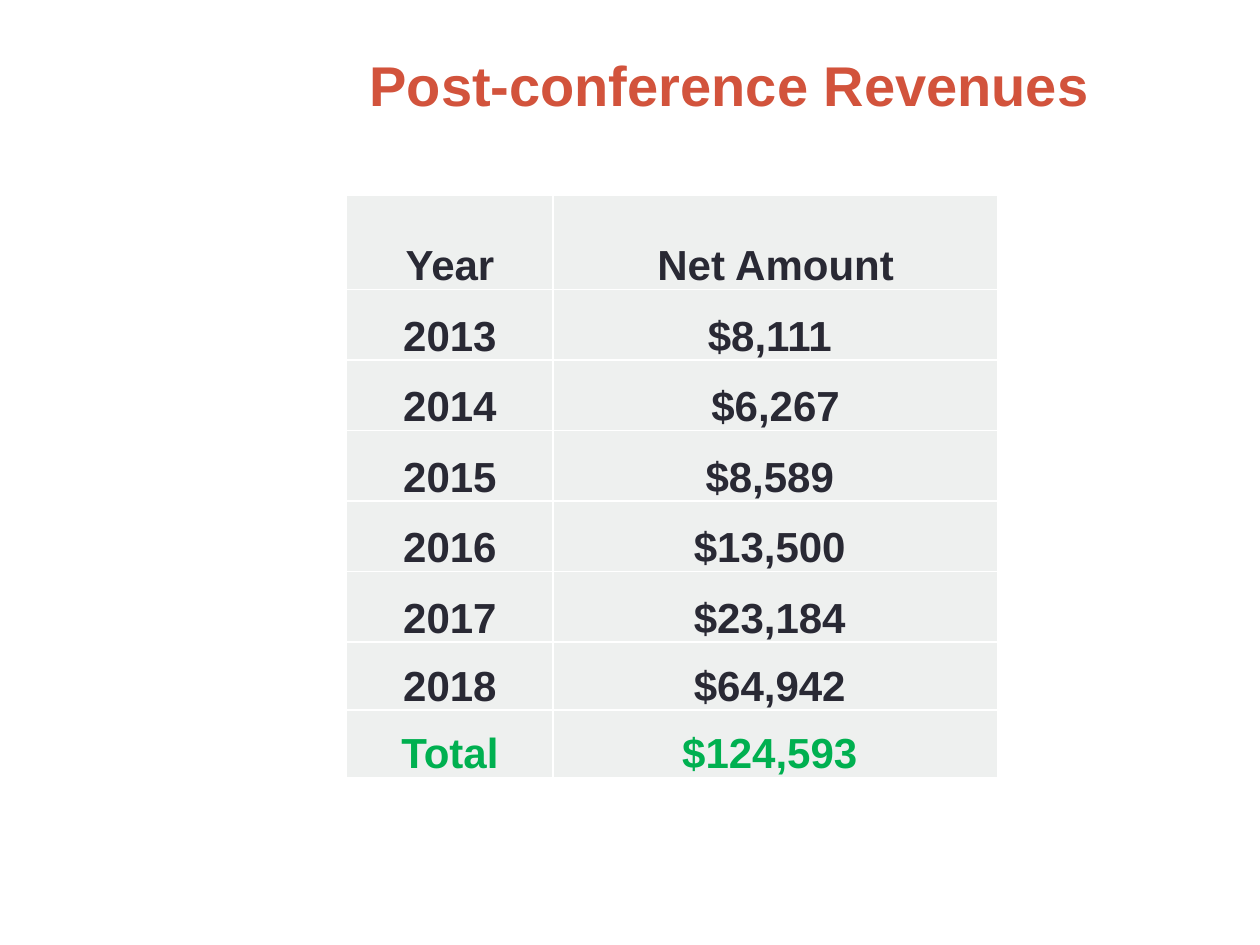
"""Build the post-conference revenues slide."""
from dataclasses import dataclass

from lxml.etree import SubElement
from pptx import Presentation
from pptx.dml.color import RGBColor as RGB
from pptx.enum.text import MSO_ANCHOR as ANCHOR, PP_ALIGN as ALIGN
from pptx.oxml.ns import qn
from pptx.util import Cm, Pt


@dataclass(frozen=True)
class Theme:
    font: str = "Arial"
    title: str = "D2533C"
    body: str = "292934"
    total: str = "00B050"
    cell: str = "EEF0EF"
    border: str = "FFFFFF"
    title_size: int = 32
    body_size: int = 24


THEME = Theme()
ROWS = [
    ("Year", "Net Amount"),
    ("2013", "$8,111 "),
    ("2014", "$6,267"),
    ("2015", "$8,589 "),
    ("2016", "$13,500 "),
    ("2017", "$23,184 "),
    ("2018", "$64,942 "),
    ("Total", "$124,593 "),
]
COL_WIDTHS = [4.16, 8.97]
ROW_HEIGHTS = [1.9] + [1.42] * 5 + [1.37] * 2


def write(tf, text, size, color):
    tf.text = text
    p = tf.paragraphs[0]
    p.alignment = ALIGN.CENTER
    font = p.runs[0].font
    font.name, font.size, font.bold = THEME.font, Pt(size), True
    font.color.rgb = RGB.from_string(color)


def add_title(s, text):
    tf = s.shapes.add_textbox(Cm(5.28), Cm(0.76), Cm(18.85), Cm(3.18)).text_frame
    tf.word_wrap = True
    tf.margin_top = Cm(0.25)
    write(tf, text, THEME.title_size, THEME.title)


def set_borders(cell):
    tc_pr = cell._tc.get_or_add_tcPr()
    for i, side in enumerate(("lnL", "lnR", "lnT", "lnB")):
        ln = SubElement(tc_pr, qn(f"a:{side}"), w=str(Pt(1)))
        fill = SubElement(ln, qn("a:solidFill"))
        SubElement(fill, qn("a:srgbClr"), val=THEME.border)
        tc_pr.insert(i, ln)


def format_cell(cell, text, color):
    cell.margin_left = cell.margin_right = cell.margin_top = Cm(0.03)
    cell.margin_bottom = 0
    cell.vertical_anchor = ANCHOR.BOTTOM
    cell.fill.solid()
    cell.fill.fore_color.rgb = RGB.from_string(THEME.cell)
    set_borders(cell)
    write(cell.text_frame, text, THEME.body_size, color)


def add_revenue_table(s):
    table = s.shapes.add_table(len(ROWS), len(COL_WIDTHS), Cm(6.99), Cm(3.94),
                               Cm(sum(COL_WIDTHS)), Cm(sum(ROW_HEIGHTS))).table
    for col, width in zip(table.columns, COL_WIDTHS):
        col.width = Cm(width)
    for row, height, texts in zip(table.rows, ROW_HEIGHTS, ROWS):
        row.height = Cm(height)
        color = THEME.total if texts[0] == "Total" else THEME.body
        for cell, text in zip(row.cells, texts):
            format_cell(cell, text, color)


def main():
    prs = Presentation()
    prs.slide_width, prs.slide_height = Cm(25.4), Cm(19.05)
    s = prs.slides.add_slide(prs.slide_layouts[6])
    add_title(s, "Post-conference Revenues")
    add_revenue_table(s)
    prs.save("out.pptx")


if __name__ == "__main__":
    main()
